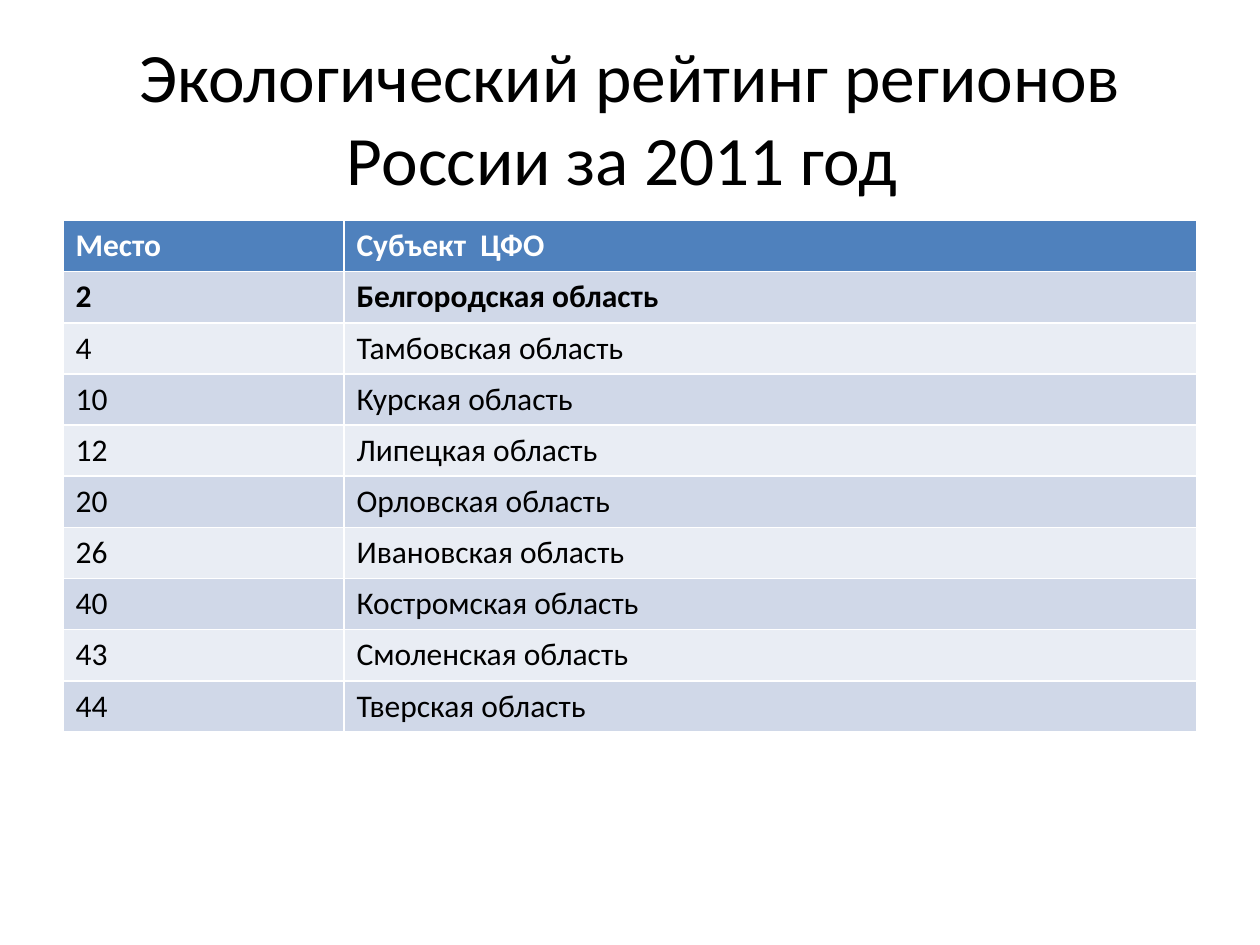
from dataclasses import dataclass

import pptx
import pptx.dml.color
import pptx.enum.text
import pptx.util


@dataclass(frozen=True)
class Theme:
    font: str = "Calibri"
    title_size: float = 39.6
    table_size: float = 18
    text: str = "000000"
    header_text: str = "FFFFFF"
    header_fill: str = "4F81BD"
    odd_fill: str = "D0D8E8"
    even_fill: str = "E9EDF4"


THEME = Theme()
SLIDE_WIDTH = pptx.util.Inches(10)
SLIDE_HEIGHT = pptx.util.Inches(7.5)
MARGIN = pptx.util.Inches(0.5)
CONTENT_WIDTH = SLIDE_WIDTH - 2 * MARGIN

TITLE = "Экологический рейтинг регионов России за 2011 год "
HEADER = ("Место", "Субъект  ЦФО")
RATING = [
    ("2", "Белгородская область"),
    ("4", "Тамбовская область"),
    ("10", "Курская область"),
    ("12", "Липецкая область"),
    ("20", "Орловская область"),
    ("26", "Ивановская область"),
    ("40", "Костромская область"),
    ("43", "Смоленская область"),
    ("44", "Тверская область"),
]


def rgb(value):
    return pptx.dml.color.RGBColor.from_string(value)


def format_runs(paragraph, size, color, bold=False):
    for run in paragraph.runs:
        run.font.name = THEME.font
        run.font.size = pptx.util.Pt(size)
        run.font.bold = bold
        run.font.color.rgb = rgb(color)


def set_title(slide):
    title = slide.shapes.title
    title.left, title.top = MARGIN, pptx.util.Inches(0.3)
    title.width, title.height = CONTENT_WIDTH, pptx.util.Inches(1.25)
    frame = title.text_frame
    frame.text = TITLE
    frame.word_wrap = True
    frame.auto_size = pptx.enum.text.MSO_AUTO_SIZE.NONE
    frame.vertical_anchor = pptx.enum.text.MSO_ANCHOR.MIDDLE
    paragraph = frame.paragraphs[0]
    paragraph.alignment = pptx.enum.text.PP_ALIGN.CENTER
    format_runs(paragraph, THEME.title_size, THEME.text)


def row_style(index):
    """Return fill, text colour and boldness; the leading region is bold too."""
    if index == 0:
        return THEME.header_fill, THEME.header_text, True
    fill = THEME.odd_fill if index % 2 else THEME.even_fill
    return fill, THEME.text, index == 1


def add_rating_table(slide):
    rows = [HEADER, *RATING]
    table = slide.shapes.add_table(
        len(rows), len(HEADER), MARGIN, pptx.util.Inches(1.75),
        CONTENT_WIDTH, pptx.util.Inches(4.06),
    ).table
    place_width = pptx.util.Inches(2.23)
    table.columns[0].width = place_width
    table.columns[1].width = CONTENT_WIDTH - place_width

    for row_index, values in enumerate(rows):
        fill, color, bold = row_style(row_index)
        for column_index, value in enumerate(values):
            cell = table.cell(row_index, column_index)
            cell.fill.solid()
            cell.fill.fore_color.rgb = rgb(fill)
            cell.text_frame.text = value
            format_runs(cell.text_frame.paragraphs[0], THEME.table_size, color, bold)


def main():
    presentation = pptx.Presentation()
    presentation.slide_width = SLIDE_WIDTH
    presentation.slide_height = SLIDE_HEIGHT
    slide = presentation.slides.add_slide(
        presentation.slide_layouts.get_by_name("Title Only"))
    set_title(slide)
    add_rating_table(slide)
    presentation.save("out.pptx")


if __name__ == "__main__":
    main()
